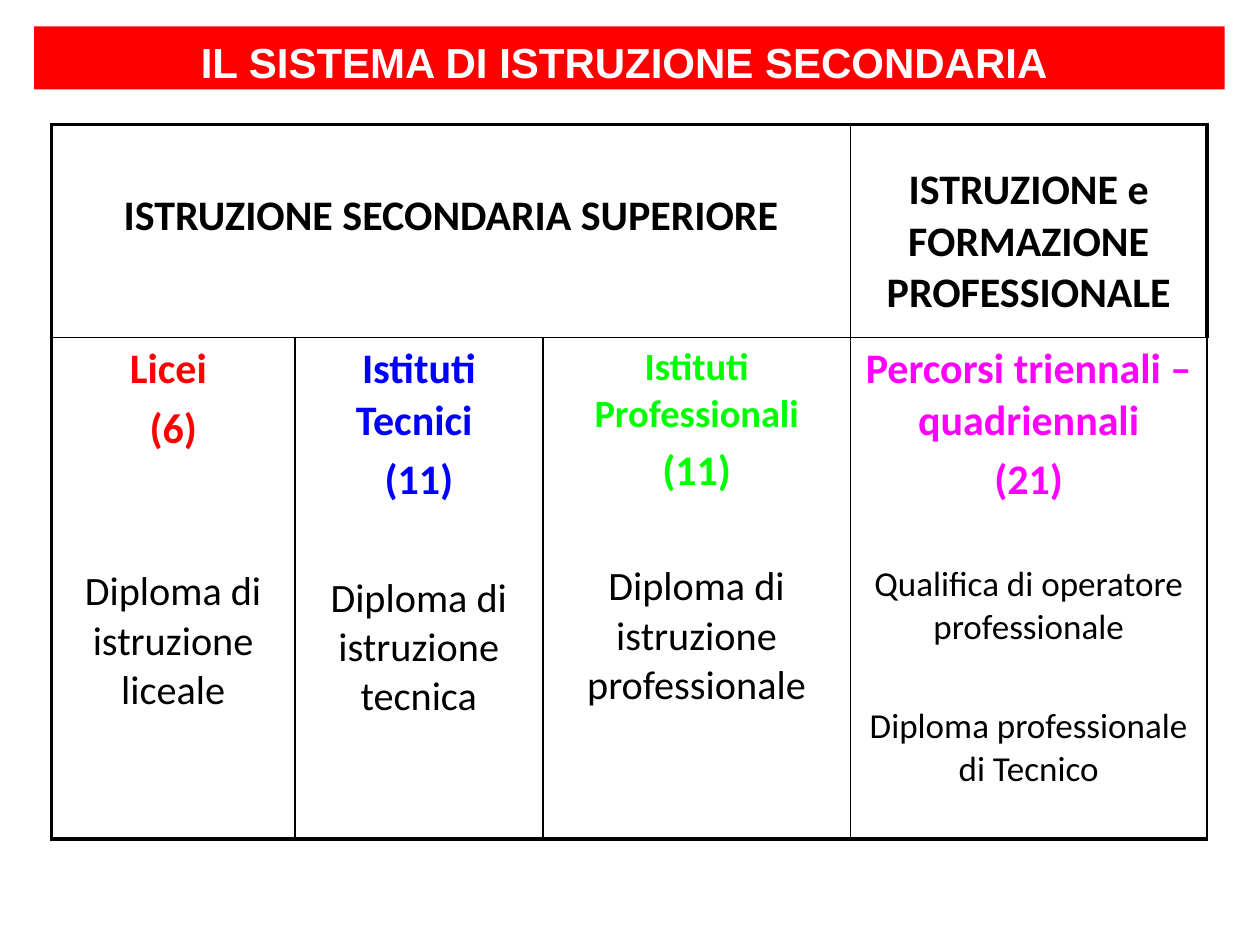
from lxml import etree
from pptx import Presentation
from pptx.dml.color import RGBColor
from pptx.enum.shapes import MSO_SHAPE
from pptx.enum.text import MSO_ANCHOR, PP_ALIGN
from pptx.oxml.ns import qn
from pptx.util import Inches, Pt

RECTANGLE = MSO_SHAPE.RECTANGLE
CENTER = PP_ALIGN.CENTER
TOP = MSO_ANCHOR.TOP

BLACK, WHITE, RED = "000000", "FFFFFF", "FF0000"
BLUE, GREEN, MAGENTA = "0000FF", "00FF00", "FF00FF"
THIN, THICK = 1, 2.25

COLUMN_WIDTHS = [1.93, 1.97, 2.44, 2.83]
ROW_HEIGHTS = [1.69, 3.98]

HEADINGS = [
    (0, "ISTRUZIONE SECONDARIA SUPERIORE", 0.52),
    (3, "ISTRUZIONE e FORMAZIONE PROFESSIONALE", 0.32),
]
PATHWAYS = [
    ("Licei ", 24, RED, "(6)", 23, 64.3, ["Diploma di istruzione liceale"]),
    ("Istituti Tecnici ", 24, BLUE, "(11)", 23, 38.7, ["Diploma di istruzione tecnica"]),
    ("Istituti Professionali", 22, GREEN, "(11)", 23, 37.3,
     ["Diploma di istruzione professionale"]),
    ("Percorsi triennali – quadriennali", 24, MAGENTA, "(21)", 20, 32.4,
     ["Qualifica di operatore professionale", "Diploma professionale di Tecnico"]),
]


def rgb(value):
    return RGBColor.from_string(value)


class SlideBuilder:
    body_font = "Calibri"
    title_font = "Arial"

    def __init__(self, slide):
        self.slide = slide

    def line(self, paragraph, text, size, color, bold=True, before=0, font=body_font):
        paragraph.text = text
        paragraph.alignment = CENTER
        paragraph.space_before = Pt(before)
        style = paragraph.runs[0].font
        style.name, style.size, style.bold = font, Pt(size), bold
        style.color.rgb = rgb(color)

    def banner(self, text, left, top, width, height):
        banner = self.slide.shapes.add_shape(
            RECTANGLE, Inches(left), Inches(top), Inches(width), Inches(height))
        banner.shadow.inherit = False
        banner.fill.solid()
        banner.fill.fore_color.rgb = rgb(RED)
        banner.line.fill.background()
        frame = banner.text_frame
        frame.word_wrap = True
        frame.vertical_anchor = TOP
        frame.margin_top, frame.margin_bottom = Inches(0.08), Inches(0.02)
        self.line(frame.paragraphs[0], text, 24, WHITE, font=self.title_font)

    def table(self, left, top, widths, heights):
        table = self.slide.shapes.add_table(
            len(heights), len(widths), Inches(left), Inches(top),
            Inches(sum(widths)), Inches(sum(heights))).table
        table.first_row = table.horz_banding = False
        for column, width in zip(table.columns, widths):
            column.width = Inches(width)
        for row, height in zip(table.rows, heights):
            row.height = Inches(height)
        return table

    def borders(self, cell, widths):
        properties = cell._tc.get_or_add_tcPr()
        for side, width in widths.items():
            border = etree.SubElement(properties, qn(f"a:ln{side}"), w=str(Pt(width)))
            fill = etree.SubElement(border, qn("a:solidFill"))
            etree.SubElement(fill, qn("a:srgbClr"), val=BLACK)
        cell.fill.background()

    def cell(self, cell, lines, margin_top=0.05):
        cell.margin_top = Inches(margin_top)
        frame = cell.text_frame
        for index, line in enumerate(lines):
            paragraph = frame.add_paragraph() if index else frame.paragraphs[0]
            self.line(paragraph, *line)


def main():
    presentation = Presentation()
    presentation.slide_width, presentation.slide_height = Inches(10), Inches(7.5)
    builder = SlideBuilder(presentation.slides.add_slide(presentation.slide_layouts[6]))
    builder.banner("IL SISTEMA DI ISTRUZIONE SECONDARIA ", 0.27, 0.21, 9.45, 0.5)

    schools = builder.table(0.41, 0.99, COLUMN_WIDTHS, ROW_HEIGHTS)
    last = len(COLUMN_WIDTHS) - 1
    for row in range(len(ROW_HEIGHTS)):
        for column in range(len(COLUMN_WIDTHS)):
            builder.borders(schools.cell(row, column), {
                "L": THICK if column == 0 else THIN,
                "R": THICK if column == last and row == 0 else THIN,
                "T": THICK if row == 0 else THIN,
                "B": THICK if row == 1 else THIN,
            })
    schools.cell(0, 0).merge(schools.cell(0, 2))

    for column, heading, margin in HEADINGS:
        builder.cell(schools.cell(0, column), [(heading, 24, BLACK)], margin)
    for column, pathway in enumerate(PATHWAYS):
        name, name_size, color, count, award_size, gap, awards = pathway
        lines = [(name, name_size, color), (count, 24, color, True, 4.8)]
        lines += [(award, award_size, BLACK, False, gap) for award in awards]
        builder.cell(schools.cell(1, column), lines)

    presentation.save("out.pptx")


if __name__ == "__main__":
    main()
